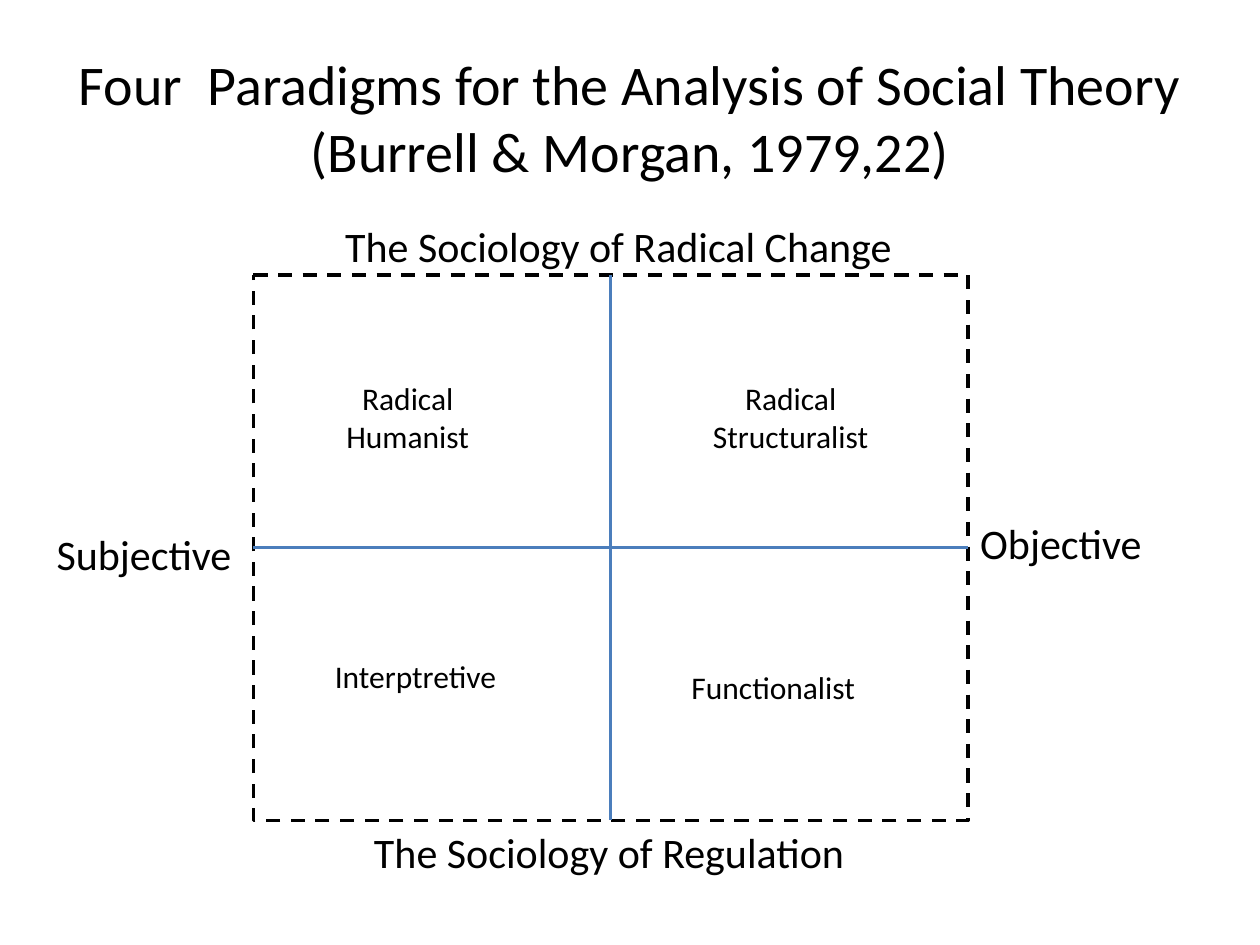
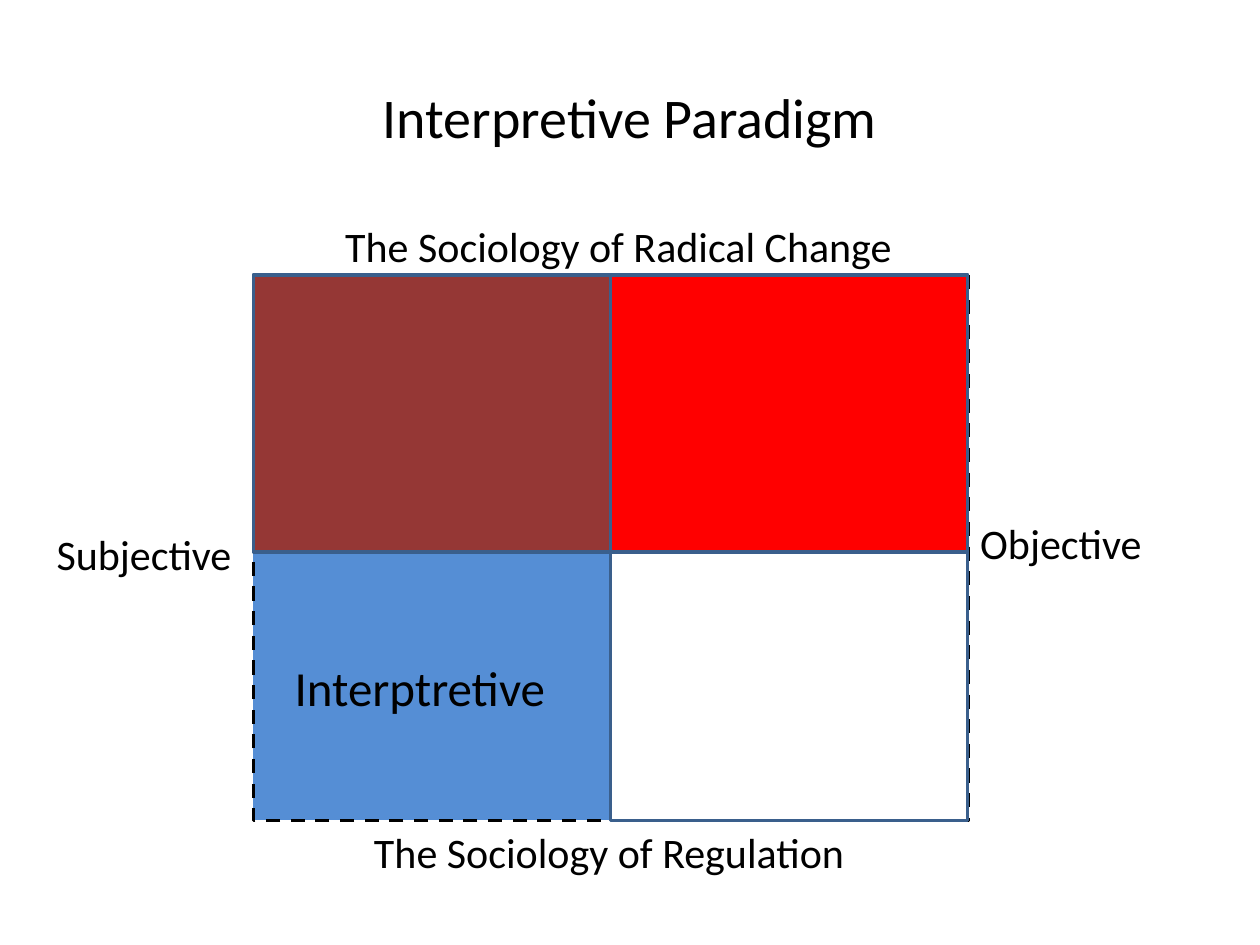
from lxml import etree
from pptx import Presentation
from pptx.dml.color import RGBColor
from pptx.enum.dml import MSO_LINE
from pptx.enum.shapes import MSO_CONNECTOR, MSO_SHAPE
from pptx.enum.text import MSO_ANCHOR, MSO_AUTO_SIZE, PP_ALIGN
from pptx.oxml.ns import qn
from pptx.util import Cm, Pt

DASH = MSO_LINE.DASH
STRAIGHT = MSO_CONNECTOR.STRAIGHT
PROCESS = MSO_SHAPE.FLOWCHART_PROCESS
RECTANGLE = MSO_SHAPE.RECTANGLE
MIDDLE, TOP = MSO_ANCHOR.MIDDLE, MSO_ANCHOR.TOP
FIT_SHAPE, NO_FIT = MSO_AUTO_SIZE.SHAPE_TO_FIT_TEXT, MSO_AUTO_SIZE.NONE
LEFT, CENTER = PP_ALIGN.LEFT, PP_ALIGN.CENTER

FONT = "Calibri"
COLORS = {
    "text": "000000",
    "frame": "000000",
    "axis": "4B7EBC",
    "border": "3A5F8C",
    "white": "FFFFFF",
    "interpretive": "558ED5",
    "humanist": "953735",
    "structuralist": "FF0000",
}

# Matrix geometry in centimetres
MATRIX_LEFT, MATRIX_TOP = 5.11, 5.54
MATRIX_WIDTH, MATRIX_HEIGHT = 14.4, 11
MATRIX_RIGHT = MATRIX_LEFT + MATRIX_WIDTH
MATRIX_BOTTOM = MATRIX_TOP + MATRIX_HEIGHT
CENTER_X = MATRIX_LEFT + MATRIX_WIDTH / 2
CENTER_Y = MATRIX_TOP + MATRIX_HEIGHT / 2
COVER_SPLIT = 11.13

# Text, left, top, width, height
AXIS_LABELS = [
    ("Subjective", 0.89, 10.52, 4.09, 1.27),
    ("Objective", 19.51, 10.31, 3.81, 1.27),
    ("The Sociology of Radical Change", 6.71, 4.32, 11.63, 1.27),
    ("The Sociology of Regulation", 7.29, 16.54, 10.08, 1.27),
]

# Title, matrix fill, paradigm text size, paradigm labels, covered quadrants
SLIDES = [
    ("Four  Paradigms for the Analysis of Social Theory\v(Burrell & Morgan, 1979,22)",
     "white", 18,
     [("Interptretive", 6.5, 13.13, 3.81, 1.02),
      ("Functionalist", 13.69, 13.34, 3.86, 1.02),
      ("Radical\nStructuralist", 14.1, 7.52, 3.68, 1.8),
      ("Radical\nHumanist", 6.71, 7.52, 3.02, 1.8)],
     []),
    ("Interpretive Paradigm", "interpretive", 28,
     [("Interptretive", 5.69, 13.13, 5.61, 1.45)],
     [("humanist", MATRIX_LEFT, MATRIX_TOP, COVER_SPLIT),
      ("structuralist", CENTER_X, MATRIX_TOP, COVER_SPLIT),
      ("white", CENTER_X, COVER_SPLIT, MATRIX_BOTTOM)]),
]


def add_text(slide, text, left, top, width, height, size, is_title=False):
    shape = slide.shapes.add_textbox(Cm(left), Cm(top), Cm(width), Cm(height))
    frame = shape.text_frame
    frame.text = text
    frame.word_wrap = is_title
    frame.auto_size = NO_FIT if is_title else FIT_SHAPE
    frame.vertical_anchor = MIDDLE if is_title else TOP
    for paragraph in frame.paragraphs:
        paragraph.alignment = CENTER if is_title or "\n" in text else LEFT
        for run in paragraph.runs:
            run.font.name = FONT
            run.font.size = Pt(size)
            run.font.color.rgb = RGBColor.from_string(COLORS["text"])


def add_box(slide, kind, left, top, width, height, fill, line):
    shape = slide.shapes.add_shape(kind, Cm(left), Cm(top), Cm(width), Cm(height))
    shape.shadow.inherit = False
    shape.fill.solid()
    shape.fill.fore_color.rgb = RGBColor.from_string(COLORS[fill])
    shape.line.color.rgb = RGBColor.from_string(COLORS[line])
    shape.line.width = Pt(2)
    return shape


presentation = Presentation()
presentation.slide_width = Cm(25.4)
presentation.slide_height = Cm(19.05)
blank_layout = presentation.slide_layouts[6]

for title, matrix_fill, label_size, paradigms, covers in SLIDES:
    slide = presentation.slides.add_slide(blank_layout)
    add_text(slide, title, 1.27, 0.76, 22.86, 3.18, 32, is_title=True)

    # Dashed matrix with its two axes
    matrix = add_box(slide, PROCESS, MATRIX_LEFT, MATRIX_TOP,
                     MATRIX_WIDTH, MATRIX_HEIGHT, matrix_fill, "frame")
    matrix.line.dash_style = DASH
    for ends in [(MATRIX_LEFT, CENTER_Y, MATRIX_RIGHT, CENTER_Y),
                 (CENTER_X, MATRIX_TOP, CENTER_X, MATRIX_BOTTOM)]:
        axis = slide.shapes.add_connector(STRAIGHT, *[Cm(value) for value in ends])
        axis.line.color.rgb = RGBColor.from_string(COLORS["axis"])
        axis.line.width = Pt(2)
        etree.SubElement(axis._element.spPr, qn("a:effectLst"))

    # Labels around and inside the matrix
    for label in AXIS_LABELS:
        add_text(slide, *label, 24)
    for paradigm in paradigms:
        add_text(slide, *paradigm, label_size)

    # Quadrants covered by a plain colour
    for fill, left, top, bottom in covers:
        add_box(slide, RECTANGLE, left, top, MATRIX_WIDTH / 2, bottom - top,
                fill, "border")

presentation.save("out.pptx")
